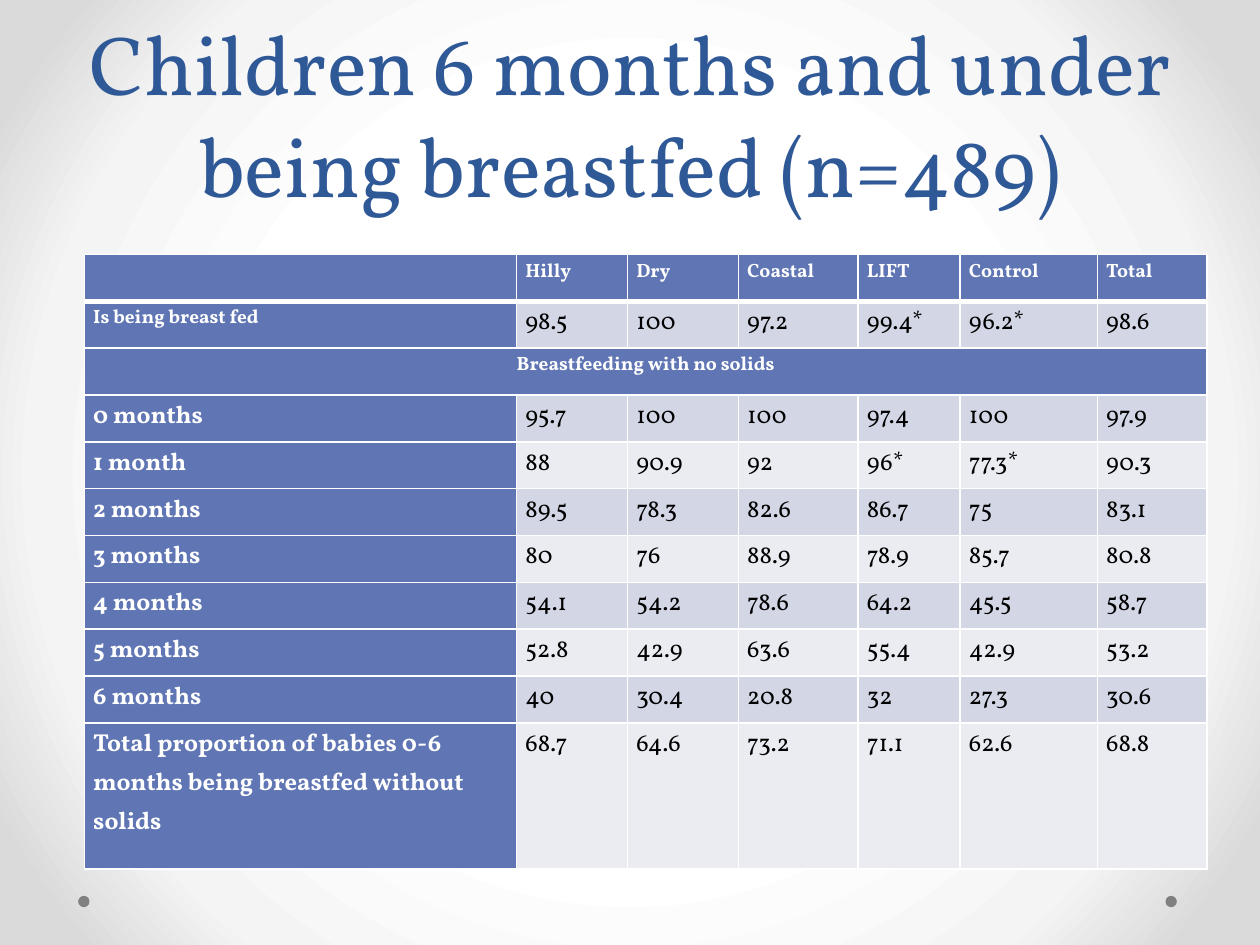
"""Build a slide with a table of breastfeeding rates for children of 6 months and under."""
from pptx import Presentation
from pptx.dml.color import RGBColor
from pptx.enum.shapes import MSO_SHAPE
from pptx.enum.text import MSO_ANCHOR, PP_ALIGN
from pptx.oxml import parse_xml
from pptx.oxml.ns import nsdecls
from pptx.util import Inches, Pt

OVAL = MSO_SHAPE.OVAL
BOTTOM = MSO_ANCHOR.BOTTOM
LEFT, CENTER = PP_ALIGN.LEFT, PP_ALIGN.CENTER

TITLE = "Children 6 months and under being breastfed (n=489)"
ROWS = [
    ["", "Hilly", "Dry", "Coastal", "LIFT", "Control", "Total"],
    ["Is being breast fed", "98.5", "100", "97.2", "99.4*", "96.2*", "98.6"],
    ["Breastfeeding with no solids"],
    ["0 months", "95.7", "100", "100", "97.4", "100", "97.9"],
    ["1 month", "88", "90.9", "92", "96*", "77.3*", "90.3"],
    ["2 months", "89.5", "78.3", "82.6", "86.7", "75", "83.1"],
    ["3 months", "80", "76", "88.9", "78.9", "85.7", "80.8"],
    ["4 months", "54.1", "54.2", "78.6", "64.2", "45.5", "58.7"],
    ["5 months", "52.8", "42.9", "63.6", "55.4", "42.9", "53.2"],
    ["6 months", "40", "30.4", "20.8", "32", "27.3", "30.6"],
    ["Total proportion of babies 0-6 months being breastfed without solids",
     "68.7", "64.6", "73.2", "71.1", "62.6", "68.8"],
]
COLS = [3.43, 0.88, 0.88, 0.95, 0.81, 1.09, 0.87]
WIDE, HIGH = 10, 7.5
GRID_X, GRID_Y, GRID_H, LAST_H = 0.67, 2.02, 4.88, 1.16
DOT, DOT_Y, DOTS = 0.09, 7.11, (0.62, 9.25)
FONT = "Vollkorn"
HEX = {"title": "2F5897", "head": "6076B4", "dark": "D2D6E5", "light": "EAECF2",
       "white": "FFFFFF", "black": "000000", "dot": "808080"}
STOPS = [(50, "FFFFFF"), (76, "F4F4F4"), (92, "DADADA")]


def rgb(name):
    return RGBColor.from_string(HEX[name])


def write(para, text, size, color, bold=False):
    run = para.add_run()
    run.text = text
    run.font.name = FONT
    run.font.size = Pt(size)
    run.font.bold = bold
    run.font.color.rgb = rgb(color)


def paint(slide):
    slide.background.fill.solid()
    props = slide._element.cSld.bg.bgPr
    stops = "".join(f'<a:gs pos="{pos * 1000}"><a:srgbClr val="{color}"/></a:gs>'
                    for pos, color in STOPS)
    props.replace(props[0], parse_xml(
        f'<a:gradFill {nsdecls("a")} rotWithShape="1"><a:gsLst>{stops}</a:gsLst>'
        '<a:path path="circle"><a:fillToRect l="50000" t="50000" r="50000" b="50000"/>'
        '</a:path></a:gradFill>'))


def edge(cell, row):
    props = cell._tc.get_or_add_tcPr()
    points = {"L": 1, "R": 1, "T": 3 if row == 1 else 1, "B": 3 if row == 0 else 1}
    for spot, (side, width) in enumerate(points.items()):
        props.insert(spot, parse_xml(
            f'<a:ln{side} {nsdecls("a")} w="{Pt(width)}"><a:solidFill>'
            f'<a:srgbClr val="{HEX["white"]}"/></a:solidFill></a:ln{side}>'))


def fill_cell(cell, row, col, text):
    band = len(ROWS[row]) == 1
    head = row == 0 or col == 0 or band
    cell.margin_left = cell.margin_right = Inches(0.07)
    cell.margin_top = cell.margin_bottom = 0
    cell.fill.solid()
    cell.fill.fore_color.rgb = rgb("head" if head else "dark" if row % 2 else "light")
    edge(cell, row)
    para = cell.text_frame.paragraphs[0]
    para.alignment = CENTER if band else LEFT
    para.line_spacing = 1.15
    para.space_after = Pt(2 if col == 0 and not band else 6)
    if text:
        size = 11 if head and row < 3 else 14
        write(para, text, size, "white" if head else "black", head)


def add_title(slide):
    box = slide.shapes.add_textbox(Inches(WIDE * 0.05), 0, Inches(WIDE * 0.9), Inches(1.75))
    frame = box.text_frame
    frame.word_wrap = True
    frame.vertical_anchor = BOTTOM
    para = frame.paragraphs[0]
    para.alignment = CENTER
    para.line_spacing = Pt(58)
    write(para, TITLE, 48, "title")


def add_grid(slide):
    table = slide.shapes.add_table(
        len(ROWS), len(COLS), Inches(GRID_X), Inches(GRID_Y),
        Inches(sum(COLS)), Inches(GRID_H)).table
    for col, width in zip(table.columns, COLS):
        col.width = Inches(width)
    step = (GRID_H - LAST_H) / (len(ROWS) - 1)
    for row, texts in enumerate(ROWS):
        table.rows[row].height = Inches(LAST_H if row == len(ROWS) - 1 else step)
        if len(texts) == 1:
            table.cell(row, 0).merge(table.cell(row, len(COLS) - 1))
        for col, text in enumerate(texts):
            fill_cell(table.cell(row, col), row, col, text)


def add_dots(slide):
    for left in DOTS:
        dot = slide.shapes.add_shape(
            OVAL, Inches(left), Inches(DOT_Y), Inches(DOT), Inches(DOT))
        dot.shadow.inherit = False
        dot.fill.solid()
        dot.fill.fore_color.rgb = rgb("dot")
        dot.line.fill.background()


def main():
    deck = Presentation()
    deck.slide_width, deck.slide_height = Inches(WIDE), Inches(HIGH)
    slide = deck.slides.add_slide(deck.slide_layouts[6])
    paint(slide)
    add_dots(slide)
    add_title(slide)
    add_grid(slide)
    deck.save("out.pptx")


if __name__ == "__main__":
    main()
